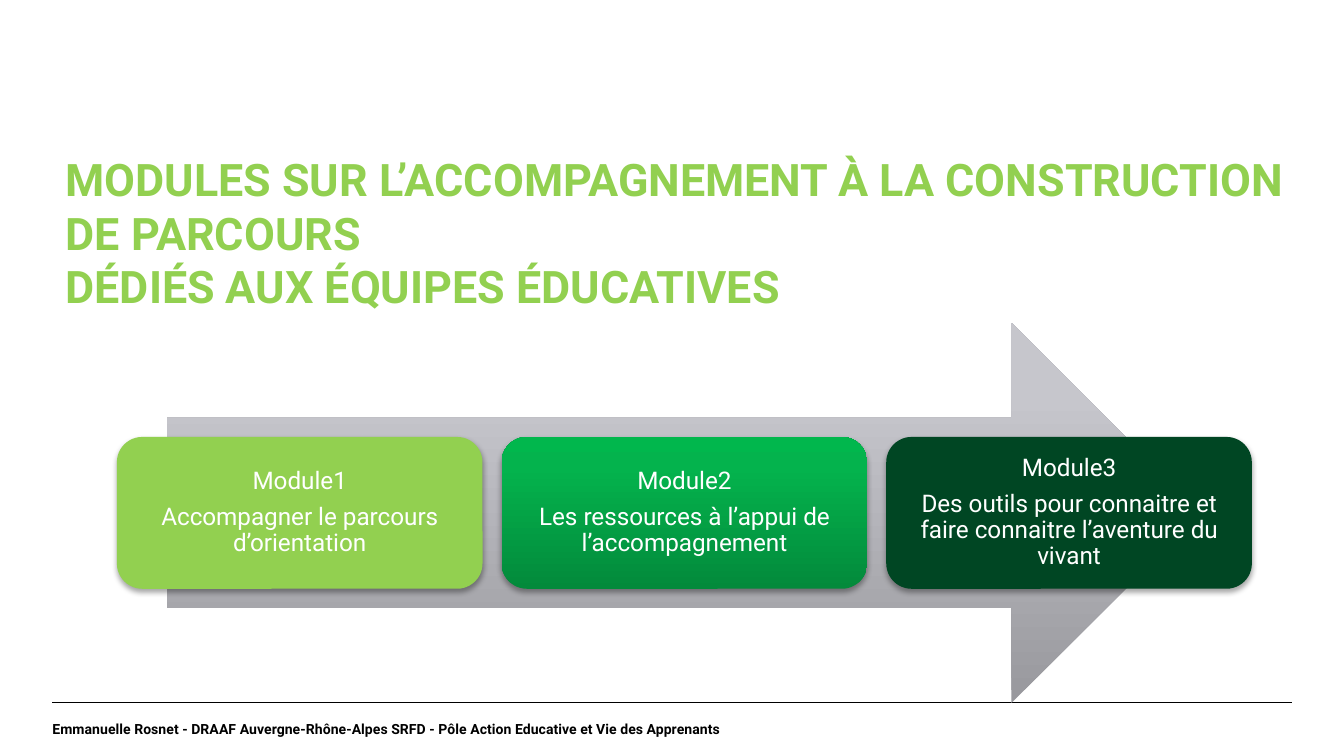
from dataclasses import dataclass
from typing import Union

from lxml.etree import SubElement
from pptx import Presentation
from pptx.dml.color import RGBColor
from pptx.enum.shapes import MSO_CONNECTOR, MSO_SHAPE
from pptx.enum.text import MSO_ANCHOR, PP_ALIGN
from pptx.oxml.ns import qn
from pptx.util import Cm, Pt


@dataclass(frozen=True)
class Gradient:
    bottom: str
    middle: str
    top: str


Fill = Union[str, Gradient]


@dataclass(frozen=True)
class Theme:
    font: str = "Roboto"
    white: str = "FFFFFF"
    black: str = "000000"
    light_green: str = "92D050"
    dark_green: str = "004623"
    green: Gradient = Gradient("038A3B", "04B34D", "01B74D")
    grey: Gradient = Gradient("98989D", "C6C6CC", "C7C7CD")
    title_size: float = 24
    module_size: float = 13
    footer_size: float = 7.5


@dataclass(frozen=True)
class Box:
    left: float
    top: float
    width: float
    height: float

    def lengths(self) -> tuple:
        return Cm(self.left), Cm(self.top), Cm(self.width), Cm(self.height)


@dataclass(frozen=True)
class Module:
    name: str
    description: str
    fill: Fill


THEME = Theme()
MODULES = [
    Module("Module1", "Accompagner le parcours d’orientation", THEME.light_green),
    Module("Module2", "Les ressources à l’appui de l’accompagnement", THEME.green),
    Module("Module3", "Des outils pour connaitre et faire connaitre l’aventure du vivant",
           THEME.dark_green),
]
FIRST_CARD = Box(2.21, 8.26, 6.91, 2.87)
CARD_PITCH = 7.27


def set_values(target, values: dict) -> None:
    for name, value in values.items():
        setattr(target, name, value)


def paint(shape, fill: Fill) -> None:
    if isinstance(fill, str):
        shape.fill.solid()
        shape.fill.fore_color.rgb = RGBColor.from_string(fill)
        return
    shape.fill.gradient()
    shape.fill.gradient_angle = 90
    stops = shape._element.spPr.find(".//" + qn("a:gsLst"))
    for stop in list(stops):
        stops.remove(stop)
    for position, color in ((0, fill.bottom), (80, fill.middle), (100, fill.top)):
        stop = SubElement(stops, qn("a:gs"), pos=str(position * 1000))
        SubElement(stop, qn("a:srgbClr"), val=color)


def add_filled_shape(slide, kind, box: Box, fill: Fill):
    shape = slide.shapes.add_shape(kind, *box.lengths())
    paint(shape, fill)
    shape.line.fill.background()
    shape.shadow.inherit = False
    return shape


def add_shadow(shape) -> None:
    effects = shape._element.spPr.find(qn("a:effectLst"))
    shadow = SubElement(effects, qn("a:outerShdw"), blurRad=str(Pt(3.1)),
                        dist=str(Pt(1.8)), dir="5400000", rotWithShape="0")
    color = SubElement(shadow, qn("a:srgbClr"), val=THEME.black)
    SubElement(color, qn("a:alpha"), val="35000")


def write(shape, lines: list, color: str, size: float, bold: bool,
          frame_format: dict, paragraph_format: dict) -> None:
    frame = shape.text_frame
    set_values(frame, {"word_wrap": True, **frame_format})
    for index, line in enumerate(lines):
        paragraph = frame.add_paragraph() if index else frame.paragraphs[0]
        paragraph.text = line
        set_values(paragraph, paragraph_format)
        set_values(paragraph.font, {"name": THEME.font, "size": Pt(size), "bold": bold})
        paragraph.font.color.rgb = RGBColor.from_string(color)


def margins(length: float) -> dict:
    return {f"margin_{side}": Cm(length) for side in ("left", "top", "right", "bottom")}


def add_footer(slide) -> None:
    rule = slide.shapes.add_connector(
        MSO_CONNECTOR.STRAIGHT, Cm(0.99), Cm(13.28), Cm(24.41), Cm(13.28))
    rule.line.width = Pt(0.8)
    rule.line.color.rgb = RGBColor.from_string(THEME.black)
    SubElement(rule._element.spPr, qn("a:effectLst"))
    footer = slide.shapes.add_textbox(*Box(0.99, 13.28, 16.41, 0.99).lengths())
    write(footer,
          ["Emmanuelle Rosnet - DRAAF Auvergne-Rhône-Alpes SRFD - "
           "Pôle Action Educative et Vie des Apprenants"],
          THEME.black, THEME.footer_size, True,
          {"vertical_anchor": MSO_ANCHOR.MIDDLE, **margins(0)}, {})


def add_title(slide) -> None:
    title = add_filled_shape(slide, MSO_SHAPE.RECTANGLE, Box(0.99, 2.74, 23.55, 3.33),
                             THEME.white)
    title.line.color.rgb = RGBColor.from_string(THEME.white)
    title.line.width = Pt(2)
    write(title,
          ["MODULES SUR L’ACCOMPAGNEMENT À LA CONSTRUCTION DE PARCOURS",
           "DÉDIÉS AUX ÉQUIPES ÉDUCATIVES"],
          THEME.light_green, THEME.title_size, True,
          {"vertical_anchor": MSO_ANCHOR.TOP}, {"alignment": PP_ALIGN.LEFT})


def add_module(slide, module: Module, box: Box) -> None:
    card = add_filled_shape(slide, MSO_SHAPE.ROUNDED_RECTANGLE, box, module.fill)
    add_shadow(card)
    write(card, [module.name, module.description], THEME.white, THEME.module_size, False,
          {"vertical_anchor": MSO_ANCHOR.MIDDLE, **margins(0.13)},
          {"alignment": PP_ALIGN.CENTER, "line_spacing": 0.9, "space_after": Pt(4.8)})


def main() -> None:
    presentation = Presentation()
    set_values(presentation, {"slide_width": Cm(25.4), "slide_height": Cm(14.29)})
    slide = presentation.slides.add_slide(presentation.slide_layouts[6])
    add_footer(slide)
    add_title(slide)
    add_filled_shape(slide, MSO_SHAPE.RIGHT_ARROW, Box(3.15, 6.1, 19.56, 7.19), THEME.grey)
    for index, module in enumerate(MODULES):
        left = FIRST_CARD.left + index * CARD_PITCH
        add_module(slide, module,
                   Box(left, FIRST_CARD.top, FIRST_CARD.width, FIRST_CARD.height))
    presentation.save("out.pptx")


if __name__ == "__main__":
    main()
